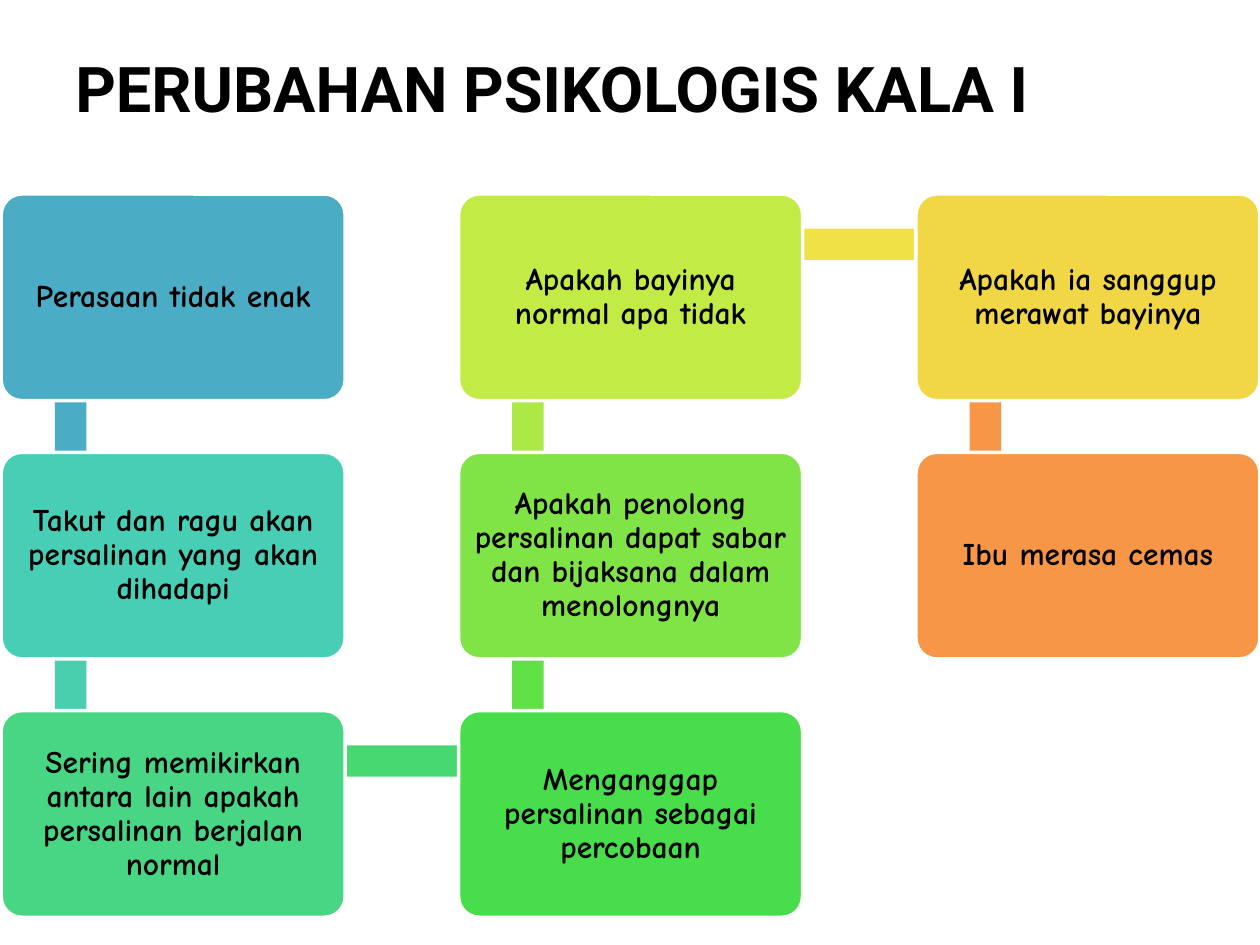
from dataclasses import dataclass
from itertools import pairwise

from pptx import Presentation
from pptx.dml.color import RGBColor
from pptx.enum.shapes import MSO_SHAPE
from pptx.enum.text import MSO_ANCHOR, PP_ALIGN
from pptx.util import Inches, Pt


@dataclass(frozen=True)
class Theme:
    text: str = "000000"
    outline: str = "FFFFFF"
    title_font: str = "Roboto"
    step_font: str = "Comic Neue"
    title_size: int = 36
    step_size: int = 18


@dataclass(frozen=True)
class Step:
    text: str
    column: int
    row: int
    fill: str
    bar_fill: str = ""  # bar leading to the next step

    @property
    def left(self) -> float:
        return GRID_LEFT + self.column * COLUMN_PITCH

    @property
    def top(self) -> float:
        return GRID_TOP + self.row * ROW_PITCH


THEME = Theme()

# Grid of steps, in inches
GRID_LEFT, GRID_TOP = 0.01, 1.54
COLUMN_PITCH, ROW_PITCH = 3.63, 2.05
STEP_WIDTH, STEP_HEIGHT = 2.73, 1.64
BAR_THICKNESS = 0.25
BAR_OFFSET_X, BAR_OFFSET_Y = 0.55, 0.4  # bar end, from a step's corner

# The path runs down, up, then down again
STEPS = [
    Step("Perasaan tidak enak", 0, 0, "4BACC6", "4BACC6"),
    Step("Takut dan ragu akan persalinan yang akan dihadapi",
         0, 1, "49CEB6", "49CFAE"),
    Step("Sering memikirkan antara lain apakah persalinan berjalan normal",
         0, 2, "48D684", "47D872"),
    Step("Menganggap persalinan sebagai percobaan",
         1, 2, "47DD4B", "60E146"),
    Step("Apakah penolong persalinan dapat sabar dan bijaksana dalam menolongnya",
         1, 1, "80E446", "ACE946"),
    Step("Apakah bayinya normal apa tidak", 1, 0, "C3EB46", "F0E146"),
    Step("Apakah ia sanggup merawat bayinya", 2, 0, "F1D746", "F79646"),
    Step("Ibu merasa cemas", 2, 1, "F79646"),
]


def write_text(frame, text: str, *, font: str, size: int,
               align=PP_ALIGN.LEFT, line_spacing: float = 1.0,
               inset_x: float = 0.1, inset_y: float = 0.05) -> None:
    frame.word_wrap = True
    frame.vertical_anchor = MSO_ANCHOR.MIDDLE
    frame.margin_left = frame.margin_right = Inches(inset_x)
    frame.margin_top = frame.margin_bottom = Inches(inset_y)
    paragraph = frame.paragraphs[0]
    paragraph.alignment = align
    paragraph.line_spacing = line_spacing
    run = paragraph.add_run()
    run.text = text
    run.font.name = font
    run.font.size = Pt(size)
    run.font.bold = True
    run.font.color.rgb = RGBColor.from_string(THEME.text)


def add_block(slide, kind, left: float, top: float, width: float,
              height: float, fill: str):
    block = slide.shapes.add_shape(
        kind, Inches(left), Inches(top), Inches(width), Inches(height))
    block.shadow.inherit = False
    block.fill.solid()
    block.fill.fore_color.rgb = RGBColor.from_string(fill)
    block.line.fill.background()
    return block


def add_bar(slide, start: Step, end: Step) -> None:
    left = min(start.left, end.left) + BAR_OFFSET_X
    top = min(start.top, end.top) + BAR_OFFSET_Y
    width = abs(end.left - start.left)
    height = abs(end.top - start.top)
    if start.column == end.column:
        left, width = left - BAR_THICKNESS / 2, BAR_THICKNESS
    else:
        top, height = top - BAR_THICKNESS / 2, BAR_THICKNESS
    add_block(slide, MSO_SHAPE.RECTANGLE, left, top, width, height,
              start.bar_fill)


def add_step(slide, step: Step) -> None:
    box = add_block(slide, MSO_SHAPE.ROUNDED_RECTANGLE, step.left, step.top,
                    STEP_WIDTH, STEP_HEIGHT, step.fill)
    box.adjustments[0] = 0.1
    box.line.color.rgb = RGBColor.from_string(THEME.outline)
    box.line.width = Pt(2)
    write_text(box.text_frame, step.text, font=THEME.step_font,
               size=THEME.step_size, align=PP_ALIGN.CENTER,
               line_spacing=0.9, inset_x=0.07, inset_y=0.07)


def main() -> None:
    presentation = Presentation()
    presentation.slide_width = Inches(10)
    presentation.slide_height = Inches(7.5)
    slide = presentation.slides.add_slide(presentation.slide_layouts[6])

    # Title
    title = slide.shapes.add_textbox(
        Inches(0.5), Inches(0.44), Inches(9), Inches(0.5))
    write_text(title.text_frame, "PERUBAHAN PSIKOLOGIS KALA I",
               font=THEME.title_font, size=THEME.title_size)

    # Bars lie behind the steps
    for start, end in pairwise(STEPS):
        add_bar(slide, start, end)
    for step in STEPS:
        add_step(slide, step)

    presentation.save("out.pptx")


if __name__ == "__main__":
    main()
